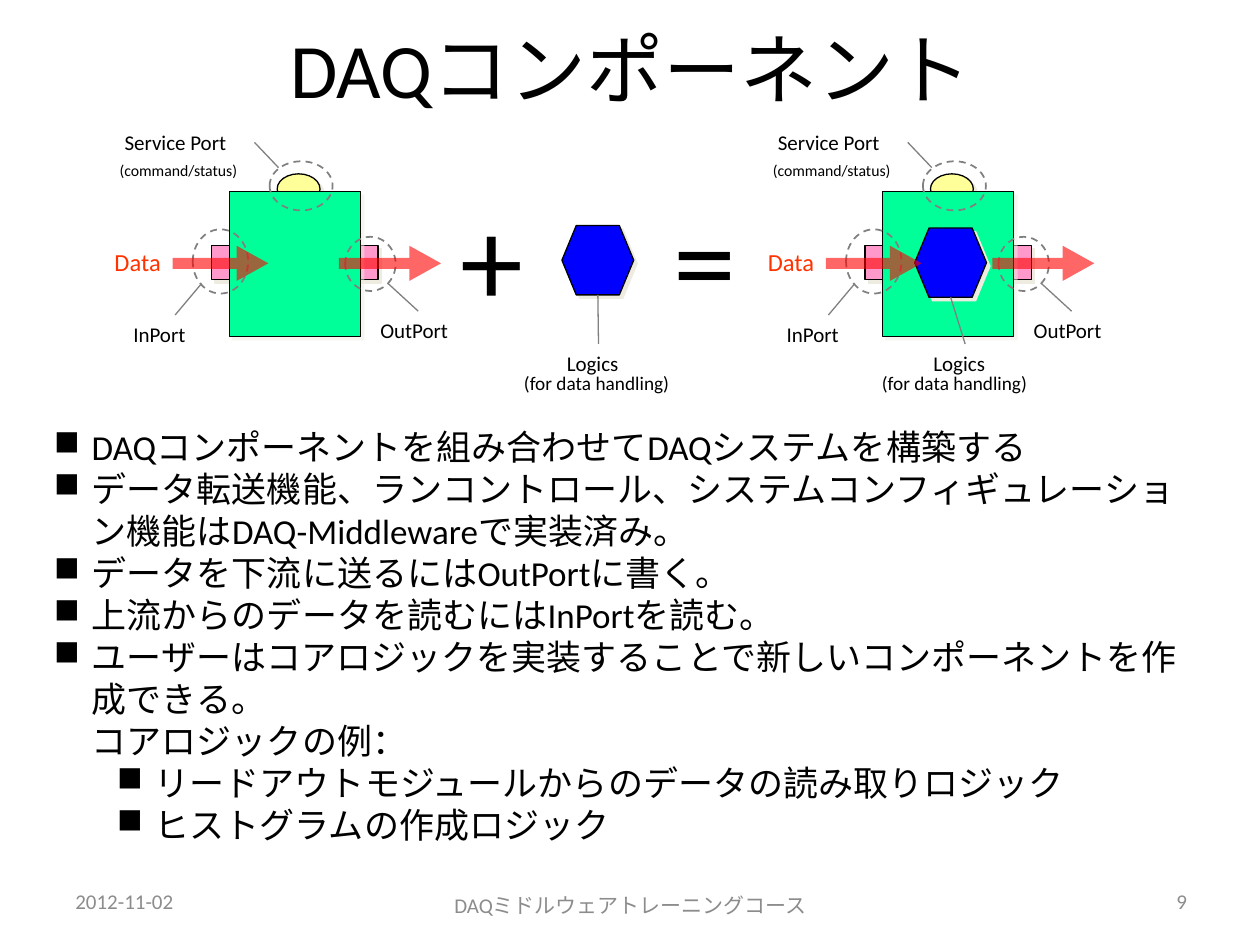
from lxml import etree
from pptx import Presentation
from pptx.dml.color import RGBColor
from pptx.enum.dml import MSO_LINE
from pptx.enum.shapes import MSO_CONNECTOR, MSO_SHAPE
from pptx.enum.text import MSO_ANCHOR, MSO_AUTO_SIZE, PP_ALIGN
from pptx.oxml.ns import qn
from pptx.util import Inches, Pt

COLUMNS, ROWS = 1000, 750
CELL = Inches(10) / COLUMNS
FONT = "Calibri"

BLACK = RGBColor(0x00, 0x00, 0x00)
WHITE = RGBColor(0xFF, 0xFF, 0xFF)
GRAY = RGBColor(0x80, 0x80, 0x80)
FOOTER_GRAY = RGBColor(0x8C, 0x8C, 0x8C)
PINK = RGBColor(0xFF, 0x99, 0xCC)
YELLOW = RGBColor(0xFF, 0xFF, 0x99)
GREEN = RGBColor(0x00, 0xFF, 0x99)
BLUE = RGBColor(0x00, 0x00, 0xFF)
RED = RGBColor(0xFF, 0x00, 0x00)
ORANGE = RGBColor(0xFF, 0x33, 0x00)
SHADOW = RGBColor(0xEE, 0xEC, 0xE1)

RECTANGLE, OVAL = MSO_SHAPE.RECTANGLE, MSO_SHAPE.OVAL
ARROW, HEXAGON = MSO_SHAPE.RIGHT_ARROW, MSO_SHAPE.FLOWCHART_PREPARATION
STRAIGHT, DASH = MSO_CONNECTOR.STRAIGHT, MSO_LINE.DASH
TOP, MIDDLE = MSO_ANCHOR.TOP, MSO_ANCHOR.MIDDLE
LEFT, CENTER, RIGHT = PP_ALIGN.LEFT, PP_ALIGN.CENTER, PP_ALIGN.RIGHT
GROW, FIXED = MSO_AUTO_SIZE.SHAPE_TO_FIT_TEXT, MSO_AUTO_SIZE.NONE
TOP_SIDE, BOTTOM_SIDE = 0, 2

COMPONENT_SHIFT = 518.5
PORTS = [
    (RECTANGLE, (276, 195, 24, 27), PINK, 100),
    (RECTANGLE, (168, 195, 24, 27), PINK, 100),
    (OVAL, (220, 138, 34, 24), YELLOW, 100),
    (RECTANGLE, (182, 152, 104, 115), GREEN, 50),
]
RINGS = [(153, 182, 44, 51), (274, 188, 40, 43), (214, 128, 50, 39)]
LEADERS = [(139, 250, 160, 225), (308, 225, 332, 247), (202, 113, 221, 133)]
PORT_LABELS = [
    ("InPort", (96, 250, 86, 30), 12, True),
    ("OutPort", (292, 247, 82, 30), 12, True),
    ("Service Port", (89, 98, 113, 30), 12, True),
    ("(command/status)", (85, 123, 121, 25), 9, False),
]
FLOWS = [(137, 195, 76, 28), (269, 195, 81, 28)]

POINTS = [
    ("DAQコンポーネントを組み合わせてDAQシステムを構築する", 0, "■"),
    ("データ転送機能、ランコントロール、システムコンフィギュレーション機能はDAQ-Middlewareで実装済み。", 0, "■"),
    ("データを下流に送るにはOutPortに書く。", 0, "■"),
    ("上流からのデータを読むにはInPortを読む。", 0, "■"),
    ("ユーザーはコアロジックを実装することで新しいコンポーネントを作成できる。", 0, "■"),
    ("コアロジックの例：", 0, None),
    ("リードアウトモジュールからのデータの読み取りロジック", 1, "■"),
    ("ヒストグラムの作成ロジック", 1, "■"),
]
FOOTERS = [
    ("2012-11-02", (50, 695, 233, 40), LEFT),
    ("DAQミドルウェアトレーニングコース", (342, 698, 317, 40), CENTER),
    ("9", (719, 695, 233, 40), RIGHT),
]


def cells(values):
    """Turn grid cells into lengths."""
    return [round(value * CELL) for value in values]


def shifted(area, shift):
    """Move an area to the right by a number of columns."""
    left, *rest = area
    return (left + shift, *rest)


def apply_format(target, values):
    """Set each attribute named in a dict of format values."""
    for name, value in values.items():
        setattr(target, name, value)


def add_span(para, text, size, color):
    """Write one run of text into a paragraph."""
    span = para.add_run()
    span.text = text
    apply_format(span.font, {"name": FONT, "size": Pt(size)})
    span.font.color.rgb = color


def add_label(page, text, area, size, color=BLACK, align=LEFT, anchor=TOP, wrap=True, fit=GROW):
    """Place a single line of text."""
    box = page.shapes.add_textbox(*cells(area))
    frame = box.text_frame
    apply_format(frame, {"word_wrap": wrap, "auto_size": fit, "vertical_anchor": anchor})
    frame.paragraphs[0].alignment = align
    add_span(frame.paragraphs[0], text, size, color)
    return box


def add_alpha(fill_element, percent):
    """Give the colour inside a fill or effect an opacity."""
    etree.SubElement(fill_element[0], qn("a:alpha"), val=str(percent * 1000))


def add_shadow(shape, percent):
    """Give a shape a hard shadow to the lower right."""
    effects = shape._element.spPr.find(qn("a:effectLst"))
    shadow = etree.SubElement(effects, qn("a:outerShdw"), dist=str(Pt(2.8)), dir=str(45 * 60000))
    etree.SubElement(shadow, qn("a:srgbClr"), val=str(SHADOW))
    add_alpha(shadow, percent)


def add_figure(page, kind, area, fill=None, line=None, width=0.75):
    """Add a preset shape with plain fill and outline."""
    shape = page.shapes.add_shape(kind, *cells(area))
    shape.shadow.inherit = False
    if fill is None:
        shape.fill.background()
    else:
        shape.fill.solid()
        shape.fill.fore_color.rgb = fill
    if line is None:
        shape.line.fill.background()
    else:
        shape.line.color.rgb = line
        shape.line.width = Pt(width)
    return shape


def add_leader(page, ends):
    """Draw a thin gray line between two points."""
    leader = page.shapes.add_connector(STRAIGHT, *cells(ends))
    leader.line.color.rgb = GRAY
    leader.line.width = Pt(0.75)
    etree.SubElement(leader._element.spPr, qn("a:effectLst"))
    return leader


def draw_component(page, shift):
    """Draw a component box with its ports and their labels."""
    for kind, area, fill, percent in PORTS:
        add_shadow(add_figure(page, kind, shifted(area, shift), fill, BLACK), percent)
    for area in RINGS:
        add_figure(page, OVAL, shifted(area, shift), None, GRAY, 1).line.dash_style = DASH
    for x1, y1, x2, y2 in LEADERS:
        add_leader(page, (x1 + shift, y1, x2 + shift, y2))
    for text, area, size, wrap in PORT_LABELS:
        add_label(page, text, shifted(area, shift), size, wrap=wrap)


def draw_logic(page, left, top, label_left, note_left):
    """Draw the logic hexagon joined to its label."""
    hexagon = add_figure(page, HEXAGON, (left, top, 57, 55), BLUE, BLACK)
    add_shadow(hexagon, 100)
    label = add_label(page, "Logics", (label_left, 273, 70, 30), 12)
    leader = add_leader(page, (label_left + 35, 273, left + 28.5, top + 55))
    leader.begin_connect(label, TOP_SIDE)
    leader.end_connect(hexagon, BOTTOM_SIDE)
    add_label(page, "(for data handling)", (note_left, 290, 145, 29), 11, wrap=False)


def draw_data_flow(page, shift):
    """Draw the translucent data arrows through both ports."""
    for area in FLOWS:
        arrow = add_figure(page, ARROW, shifted(area, shift), RED)
        arrow.adjustments[0], arrow.adjustments[1] = 0.31, 0.9
        add_alpha(arrow._element.spPr.find(qn("a:solidFill")), 60)
    add_label(page, "Data", shifted((81, 191, 62, 34), shift), 14, ORANGE, wrap=False)


def draw_points(page):
    """Write the bulleted text below the diagram."""
    box = add_figure(page, RECTANGLE, (23, 266, 936, 376), WHITE)
    frame = box.text_frame
    apply_format(frame, {"word_wrap": True, "vertical_anchor": TOP, "margin_top": Inches(0.72)})
    for index, (text, level, bullet) in enumerate(POINTS):
        para = frame.add_paragraph() if index else frame.paragraphs[0]
        apply_format(para, {"level": level, "alignment": LEFT})
        properties = para._p.get_or_add_pPr()
        properties.set("marL", str(Inches(0.4 + 0.5 * level)))
        properties.set("indent", str(Inches(-0.3 if bullet else 0)))
        if bullet:
            etree.SubElement(properties, qn("a:buChar"), char=bullet)
        add_span(para, text, 20, BLACK)


def main():
    """Build the slide and save the deck."""
    deck = Presentation()
    apply_format(deck, {"slide_width": round(COLUMNS * CELL), "slide_height": round(ROWS * CELL)})
    page = deck.slides.add_slide(deck.slide_layouts[6])
    add_label(page, "DAQコンポーネント", (51, 0, 900, 108), 44, align=CENTER, anchor=MIDDLE, fit=FIXED)
    draw_points(page)
    draw_component(page, 0)
    draw_logic(page, 446, 179, 440, 406)
    draw_data_flow(page, 0)
    draw_component(page, COMPONENT_SHIFT)
    draw_logic(page, 726, 181, 731, 690)
    draw_data_flow(page, COMPONENT_SHIFT)
    for sign, left in (("+", 356), ("=", 525)):
        add_label(page, sign, (left, 138, 71, 131), 72, wrap=False)
    for text, area, align in FOOTERS:
        add_label(page, text, area, 12, FOOTER_GRAY, align, MIDDLE, fit=FIXED)
    deck.save("out.pptx")


if __name__ == "__main__":
    main()
